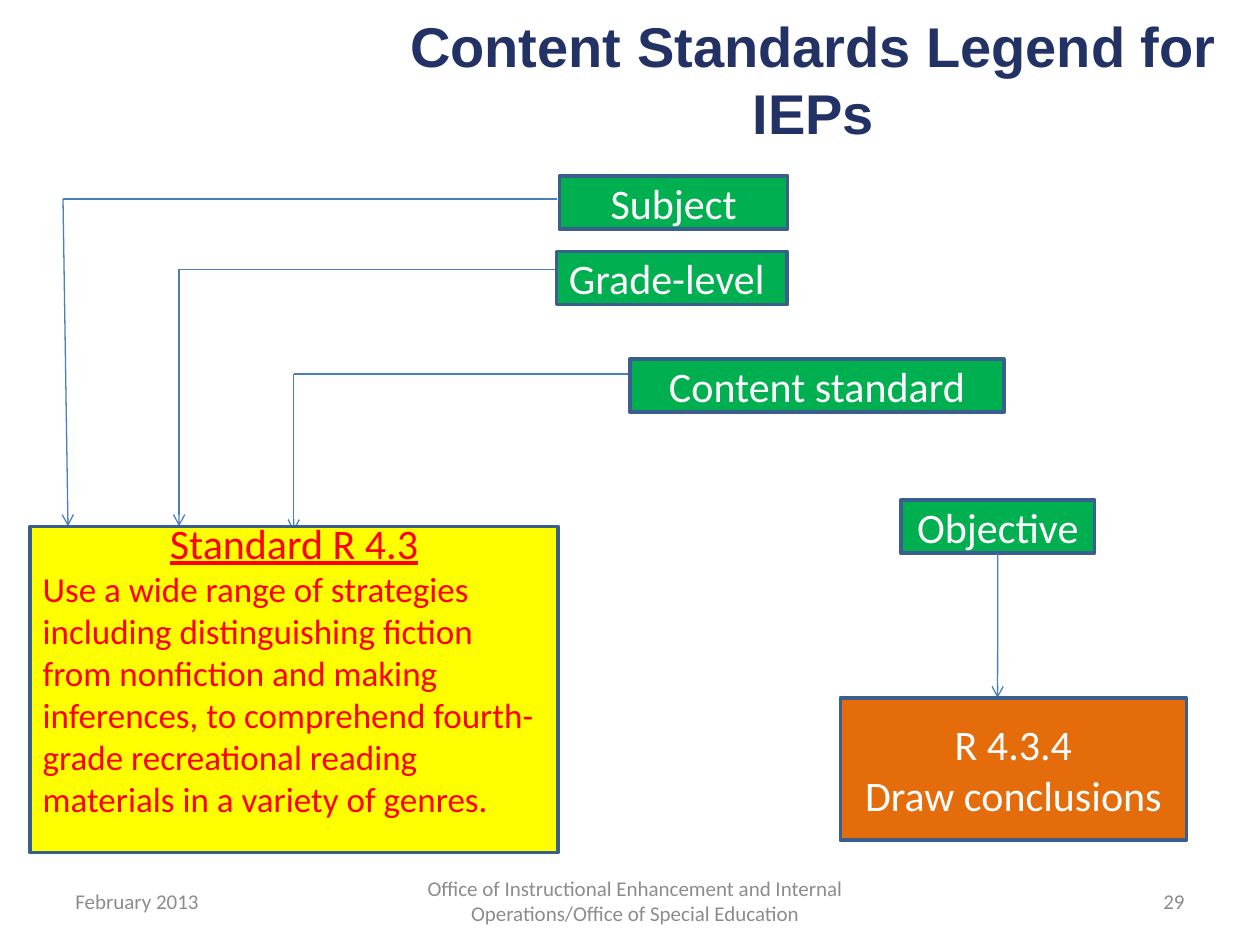
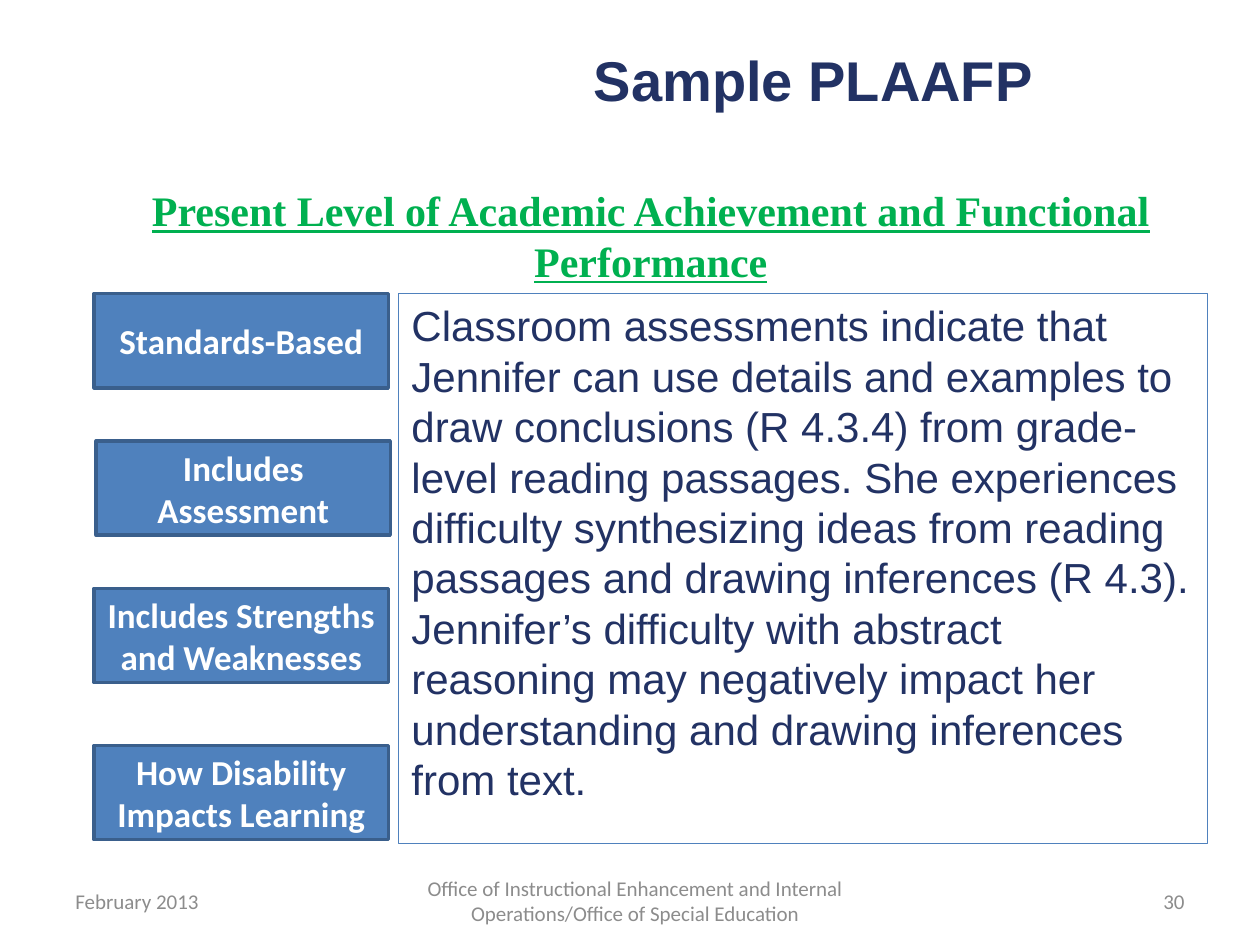
from pptx import Presentation
from pptx.dml.color import RGBColor
from pptx.enum.shapes import MSO_CONNECTOR, MSO_SHAPE
from pptx.enum.text import MSO_ANCHOR, MSO_AUTO_SIZE, PP_ALIGN
from pptx.oxml.ns import qn
from pptx.util import Cm, Pt
from lxml.etree import SubElement

NAVY = RGBColor(0x22, 0x32, 0x64)
GREEN = RGBColor(0x00, 0xB0, 0x50)
YELLOW = RGBColor(0xFF, 0xFF, 0x00)
ORANGE = RGBColor(0xE4, 0x6C, 0x0A)
RED = RGBColor(0xFF, 0x00, 0x00)
BLUE = RGBColor(0x4F, 0x81, 0xBD)
EDGE = RGBColor(0x3A, 0x5F, 0x8C)
WIRE = RGBColor(0x4B, 0x7E, 0xBC)
GREY = RGBColor(0x8C, 0x8C, 0x8C)
WHITE = RGBColor(0xFF, 0xFF, 0xFF)

LEFT, MID, RIGHT = PP_ALIGN.LEFT, PP_ALIGN.CENTER, PP_ALIGN.RIGHT

TITLE_BOX = (7.41, 0, 17.98, 3.18)
FOOT_BOX = (1.27, 17.65, 22.86, 1.02)
LEGEND_BOX = (0.61, 3.55, 23.31, 13.64)
SAMPLE_BOX = (1.9, 3.6, 22.44, 13.41)

DATE = "February 2013"
OFFICE = "Office of Instructional Enhancement and Internal Operations/Office of Special Education"
STANDARD = (
    "Use a wide range of strategies including distinguishing fiction from "
    "nonfiction and making inferences, to comprehend fourth-grade recreational "
    "reading materials in a variety of genres."
)
PASSAGE = (
    "Classroom assessments indicate that Jennifer can use details and examples to "
    "draw conclusions (R 4.3.4) from grade-level reading passages. She experiences "
    "difficulty synthesizing ideas from reading passages and drawing inferences "
    "(R 4.3). Jennifer’s difficulty with abstract reasoning may negatively impact "
    "her understanding and drawing inferences from text."
)
LABELS = [
    ("Standards-Based", 0, 2.32),
    ("Includes Assessment", 0.04, 5.29),
    ("Includes Strengths and Weaknesses", 0, 8.26),
    ("How Disability Impacts Learning", 0, 11.43),
]


def style(para, size, color, face="Calibri", align=MID, bold=False, under=False, plain=False):
    para.alignment = align
    para.space_before = Pt(0)
    if plain:
        props = para._p.get_or_add_pPr()
        props.set("marL", "0")
        props.set("indent", "0")
        SubElement(props, qn("a:buNone"))
    font = para.font
    font.name, font.size, font.bold, font.underline = face, Pt(size), bold, under
    font.color.rgb = color


def write(shape, text, size, color, anchor=MSO_ANCHOR.MIDDLE, **look):
    frame = shape.text_frame
    frame.text = text
    frame.word_wrap = True
    frame.auto_size = MSO_AUTO_SIZE.NONE
    frame.vertical_anchor = anchor
    for para in frame.paragraphs:
        style(para, size, color, **look)


def place(shape, box):
    shape.left, shape.top, shape.width, shape.height = map(Cm, box)


def text_box(slide, box, text, size, color, **look):
    shape = slide.shapes.add_textbox(*map(Cm, box))
    write(shape, text, size, color, **look)


def panel(slide, box, fill, text, size=24, **look):
    shape = slide.shapes.add_shape(MSO_SHAPE.RECTANGLE, *map(Cm, box))
    shape.shadow.inherit = False
    shape.fill.solid()
    shape.fill.fore_color.rgb = fill
    shape.line.color.rgb = EDGE
    shape.line.width = Pt(2)
    write(shape, text, size, WHITE, **look)
    return shape


def wire(slide, start, end, arrow=False):
    line = slide.shapes.add_connector(MSO_CONNECTOR.STRAIGHT, *map(Cm, start + end))
    line.line.color.rgb = WIRE
    line.line.width = Pt(0.75)
    if arrow:
        SubElement(line.line._get_or_add_ln(), qn("a:tailEnd"), type="arrow")
    SubElement(line._element.spPr, qn("a:effectLst"))
    return line


def title(slide, text):
    place(slide.shapes.title, TITLE_BOX)
    write(slide.shapes.title, text, 32, NAVY, face="Arial", bold=True)


def footer(slide, box, number):
    x, y, w, h = box
    parts = [(DATE, 0, 5.92, LEFT), (OFFICE, 5.92, 11.23, MID), (number, 17.14, 5.72, RIGHT)]
    for text, dx, width, align in parts:
        text_box(slide, (x + dx, y, width, h), text, 12, GREY, align=align)


def legend(slide, box):
    x, y, w, h = box
    top = 7.06
    routes = [
        (10.61, 0.66, 0.46, 0.76, top),
        (10.66, 3, 1.88, 3, top),
        (12.09, 5.31, 3.99, 5.31, top + 0.1),
    ]
    for start, turn, level, tip, end in routes:
        bend = (x + turn, y + level)
        wire(slide, (x + start, y + level), bend)
        wire(slide, bend, (x + tip, y + end), arrow=True)

    tags = [
        ("Subject", 10.67, 0, 4.6, MID),
        ("Grade-level", 10.61, 1.52, 4.65, LEFT),
        ("Content standard", 12.09, 3.69, 7.54, MID),
        ("Objective", 17.55, 6.53, 3.91, MID),
    ]
    for text, dx, dy, width, align in tags:
        tag = panel(slide, (x + dx, y + dy, width, 1.07), GREEN, text, align=align)

    goal = 10.52
    stem = x + 19.5
    arrow = wire(slide, (stem, y + 7.6), (stem, y + goal), arrow=True)
    arrow.begin_connect(tag, 2)

    card = panel(slide, (x, y + top, 10.64, h - top), YELLOW, "Standard R 4.3\n" + STANDARD)
    frame = card.text_frame
    frame.margin_top, frame.margin_bottom = Cm(0), Cm(0.85)
    head, body = frame.paragraphs
    style(head, 24, RED, under=True)
    style(body, 20, RED, align=LEFT)
    panel(slide, (x + 16.33, y + goal, w - 16.33, 2.87), ORANGE, "R 4.3.4\nDraw conclusions")


def sample(slide, box):
    x, y, w, h = box
    body = slide.placeholders[1]
    place(body, (x + 6.14, y + 2.32, w - 6.14, h - 2.32))
    body.line.color.rgb = BLUE
    body.line.width = Pt(0.75)
    write(body, PASSAGE, 24, NAVY, MSO_ANCHOR.TOP, face="Arial", align=LEFT, plain=True)

    for text, dx, dy in LABELS:
        panel(slide, (x + dx, y + dy, 5.93, 1.9), BLUE, text, 20, bold=True)
    text_box(slide, (x, y, w, 2.31), "Present Level of Academic Achievement and Functional Performance",
             24, GREEN, anchor=MSO_ANCHOR.TOP, face="Times New Roman", bold=True, under=True)


def main():
    deck = Presentation()
    deck.slide_width, deck.slide_height = Cm(25.4), Cm(19.05)
    pages = [
        (5, "Content Standards Legend for IEPs", "29", legend, LEGEND_BOX),
        (1, "Sample PLAAFP", "30", sample, SAMPLE_BOX),
    ]
    for layout, name, number, draw, box in pages:
        slide = deck.slides.add_slide(deck.slide_layouts[layout])
        title(slide, name)
        footer(slide, FOOT_BOX, number)
        draw(slide, box)
    deck.save("out.pptx")


if __name__ == "__main__":
    main()
